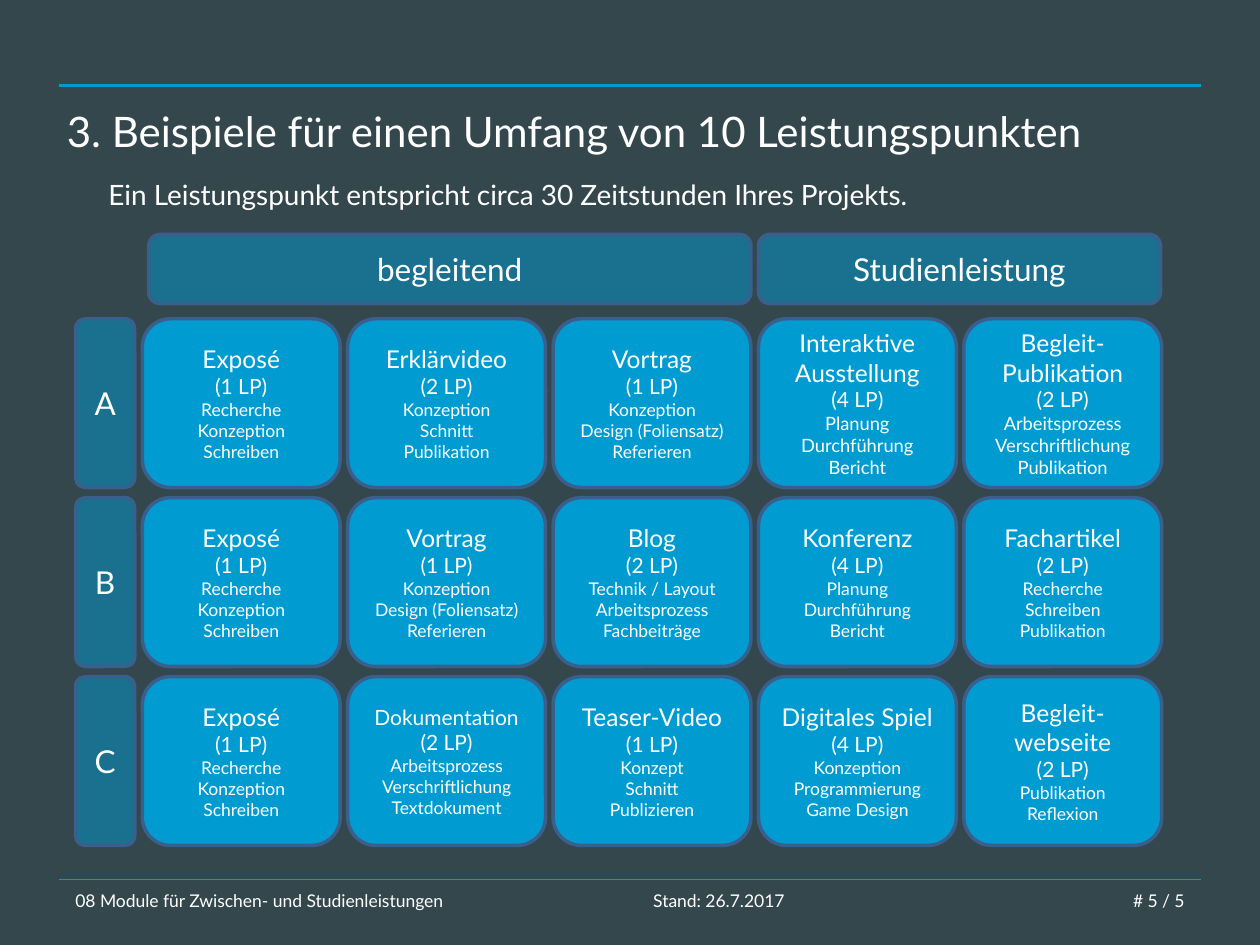
from lxml import etree
from pptx import Presentation
from pptx.dml.color import RGBColor
from pptx.enum.shapes import MSO_CONNECTOR, MSO_SHAPE
from pptx.enum.text import MSO_ANCHOR, MSO_AUTO_SIZE, PP_ALIGN
from pptx.oxml.ns import qn
from pptx.util import Inches, Pt

LEFT, CENTER, RIGHT = PP_ALIGN.LEFT, PP_ALIGN.CENTER, PP_ALIGN.RIGHT
TOP, MIDDLE = MSO_ANCHOR.TOP, MSO_ANCHOR.MIDDLE
NO_AUTOSIZE = MSO_AUTO_SIZE.NONE
ROUNDED = MSO_SHAPE.ROUNDED_RECTANGLE
STRAIGHT = MSO_CONNECTOR.STRAIGHT

FONT = "Lato"
BACKGROUND, BLUE, OUTLINE, WHITE = "33474D", "009CD1", "3A5F8C", "FFFFFF"
CELL_WIDTH, CELL_HEIGHT = 1.57, 1.34
COLUMN_STEP, ROW_STEP = 1.63, 1.42

EXPOSE = ("Exposé", "(1 LP)", "Recherche", "Konzeption", "Schreiben")
VORTRAG = ("Vortrag", "(1 LP)", "Konzeption", "Design (Foliensatz)", "Referieren")
MODULES = {
    "A": [
        EXPOSE,
        ("Erklärvideo", "(2 LP)", "Konzeption", "Schnitt", "Publikation"),
        VORTRAG,
        ("Interaktive", "Ausstellung", "(4 LP)", "Planung", "Durchführung", "Bericht"),
        ("Begleit-Publikation", "(2 LP)", "Arbeitsprozess", "Verschriftlichung", "Publikation"),
    ],
    "B": [
        EXPOSE,
        VORTRAG,
        ("Blog", "(2 LP)", "Technik / Layout", "Arbeitsprozess", "Fachbeiträge"),
        ("Konferenz", "(4 LP)", "Planung", "Durchführung", "Bericht"),
        ("Fachartikel", "(2 LP)", "Recherche", "Schreiben", "Publikation"),
    ],
    "C": [
        EXPOSE,
        ("Dokumentation", "(2 LP)", "Arbeitsprozess", "Verschriftlichung", "Textdokument"),
        ("Teaser-Video", "(1 LP)", "Konzept", "Schnitt", "Publizieren"),
        ("Digitales Spiel", "(4 LP)", "Konzeption", "Programmierung", "Game Design"),
        ("Begleit-webseite", "(2 LP)", "Publikation", "Reflexion"),
    ],
}
TASK_SIZES = {("A", 3): 10.5, ("A", 4): 10.5}
HEADING_SIZES = {("C", 1): 12}


def color(value):
    return RGBColor.from_string(value)


def write(shape, lines, sizes, alignment, anchor=MIDDLE):
    text_frame = shape.text_frame
    text_frame.text = "\n".join(lines)
    text_frame.word_wrap = True
    text_frame.auto_size = NO_AUTOSIZE
    text_frame.vertical_anchor = anchor
    for paragraph, size in zip(text_frame.paragraphs, sizes):
        paragraph.alignment = alignment
        paragraph.space_before = Pt(0)
        for run in paragraph.runs:
            run.font.name = FONT
            run.font.size = Pt(size)
            run.font.color.rgb = color(WHITE)


def place(shape, left, top, width, height):
    shape.left, shape.top = Inches(left), Inches(top)
    shape.width, shape.height = Inches(width), Inches(height)


def add_box(slide, left, top, width, height, lines, sizes, alpha=None):
    box = slide.shapes.add_shape(ROUNDED, Inches(left), Inches(top), Inches(width), Inches(height))
    box.shadow.inherit = False
    box.fill.solid()
    box.fill.fore_color.rgb = color(BLUE)
    if alpha:
        fill_color = box.fill._xPr.find(qn("a:solidFill"))[0]
        etree.SubElement(fill_color, qn("a:alpha")).set("val", str(alpha * 1000))
    box.line.color.rgb = color(OUTLINE)
    box.line.width = Pt(2)
    box.text_frame.margin_left = box.text_frame.margin_right = Inches(0.08)
    write(box, lines, sizes, CENTER)


def add_rule(slide, left, top, width, weight):
    rule = slide.shapes.add_connector(
        STRAIGHT, Inches(left), Inches(top), Inches(left + width), Inches(top))
    rule.line.color.rgb = color(BLUE)
    rule.line.width = Pt(weight)
    etree.SubElement(rule._element.spPr, qn("a:effectLst"))


def add_heading(slide, left, top, width):
    add_rule(slide, left + 0.04, top - 0.08, 9.06, 1.5)
    title, subtitle = slide.placeholders
    place(title, left, top, width, 0.55)
    write(title, ["3. Beispiele für einen Umfang von 10 Leistungspunkten"], [24], LEFT)
    place(subtitle, left + 0.33, top + 0.6, width - 0.32, 0.37)
    write(subtitle, ["Ein Leistungspunkt entspricht circa 30 Zeitstunden Ihres Projekts."],
          [16], LEFT, TOP)


def add_column_headers(slide, left, top):
    add_box(slide, left, top, 4.78, 0.55, ["begleitend"], [18], alpha=50)
    add_box(slide, left + 4.84, top, 3.19, 0.55, ["Studienleistung"], [18], alpha=50)


def line_sizes(lines, heading_size, task_size):
    points = next(index for index, line in enumerate(lines) if line.endswith("LP)"))
    return [heading_size] * points + [12] + [task_size] * (len(lines) - points - 1)


def add_module_grid(slide, left, top):
    for row, (letter, modules) in enumerate(MODULES.items()):
        row_top = top + row * ROW_STEP
        add_box(slide, left, row_top, 0.47, CELL_HEIGHT, [letter], [18], alpha=50)
        for column, lines in enumerate(modules):
            key = (letter, column)
            sizes = line_sizes(lines, HEADING_SIZES.get(key, 14), TASK_SIZES.get(key, 10))
            add_box(slide, left + 0.53 + column * COLUMN_STEP, row_top,
                    CELL_WIDTH, CELL_HEIGHT, lines, sizes)


def add_footer(slide, left, top):
    add_rule(slide, left - 0.03, top + 0.03, 9.06, 1)
    entries = [
        (0, 3.79, "08 Module für Zwischen- und Studienleistungen", LEFT),
        (3.16, 4.09, "Stand: 26.7.2017", CENTER),
        (8.28, 0.72, "# 5 / 5", RIGHT),
    ]
    for offset, width, text, alignment in entries:
        box = slide.shapes.add_textbox(
            Inches(left + offset), Inches(top), Inches(width), Inches(0.4))
        write(box, [text], [10], alignment)


def main():
    presentation = Presentation()
    presentation.slide_width, presentation.slide_height = Inches(10), Inches(7.5)
    slide = presentation.slides.add_slide(presentation.slide_layouts[0])
    slide.background.fill.solid()
    slide.background.fill.fore_color.rgb = color(BACKGROUND)
    add_heading(slide, 0.43, 0.76, 8.74)
    add_column_headers(slide, 1.18, 1.86)
    add_module_grid(slide, 0.6, 2.53)
    add_footer(slide, 0.5, 6.95)
    presentation.save("out.pptx")


if __name__ == "__main__":
    main()
